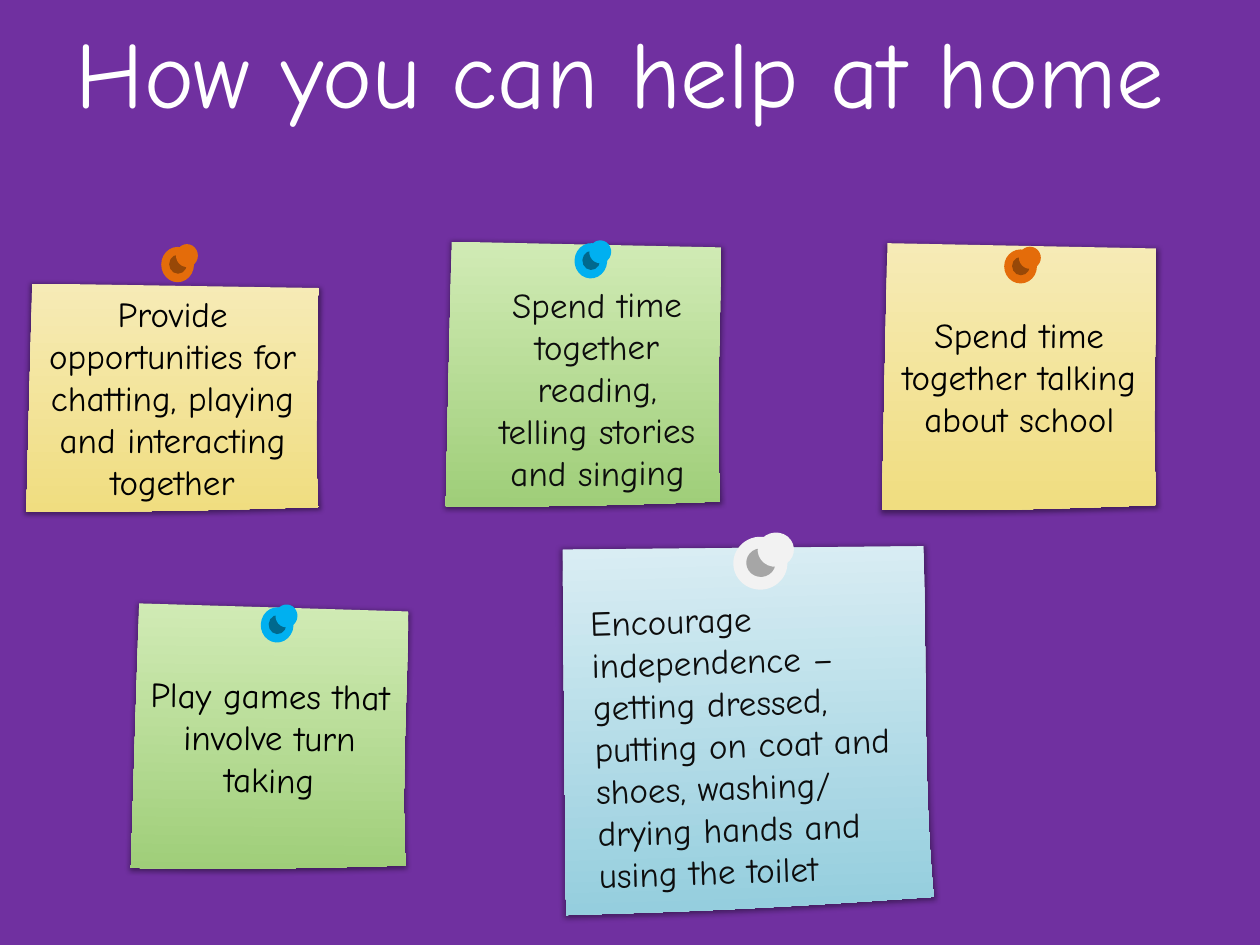
"""Build a slide of pinned sticky notes on a 100 by 75 grid."""
from dataclasses import dataclass
from typing import Optional

from lxml import etree
from pptx import Presentation
from pptx import util as u
from pptx.dml.color import RGBColor
from pptx.enum import shapes, text
from pptx.oxml import ns

CELL = u.Inches(0.1)
FONT = "Comic Neue"
PURPLE = RGBColor(0x70, 0x30, 0xA0)
WHITE = RGBColor(0xFF, 0xFF, 0xFF)
BLACK = RGBColor(0, 0, 0)
INK = RGBColor(0x0D, 0x0D, 0x0D)
YELLOW = (RGBColor(0xF6, 0xEB, 0xB6), RGBColor(0xF0, 0xDD, 0x80))
GREEN = (RGBColor(0xD1, 0xEB, 0xB5), RGBColor(0x9F, 0xCE, 0x79))
BLUE = (RGBColor(0xDB, 0xEE, 0xF4), RGBColor(0x93, 0xCD, 0xDD))
ORANGE = (RGBColor(0xE4, 0x6C, 0x0A), RGBColor(0x98, 0x48, 0x07))
SKY = (RGBColor(0, 0xB0, 0xF0), RGBColor(0, 0x69, 0x8E))
PALE = (RGBColor(0xF2, 0xF2, 0xF2), RGBColor(0xA6, 0xA6, 0xA6))

TOP = ((0.02, 0), (1, 0.02))
SIDE = ((1, 0.34), (0.98, 0.68), (1, 0.98))
FOOT = ((0.5, 1), (0.33, 1), (0, 1))
DISCS = ((0, 0, 1, 1, 0), (0.24, 0.22, 0.54, 0.54, 1), (0.45, -0.08, 0.67, 0.65, 0))


@dataclass
class Box:
    """Place on the grid, with a turn in degrees."""
    x: float
    y: float
    w: float
    h: float
    turn: float = 0

    def emu(self) -> list[int]:
        return [round(v * CELL) for v in (self.x, self.y, self.w, self.h)]


@dataclass
class Note:
    """Sticky note with its pin and, if needed, its own label box."""
    words: str
    box: Box
    tint: tuple
    pin: Box
    hue: tuple
    label: Optional[Box] = None
    align: text.PP_ALIGN = text.PP_ALIGN.CENTER


NOTES = [
    Note("Spend time together talking about school",
         Box(70, 19.3, 21.8, 21.2), YELLOW, Box(79.7, 19.8, 2.6, 2.7), ORANGE),
    Note("Spend time together reading, telling stories and singing",
         Box(35.4, 19.2, 21.8, 21, 0.1), GREEN, Box(45.6, 19.3, 2.6, 2.8, 3.6), SKY,
         Box(38.2, 21.9, 18.4, 17.8, -0.2)),
    Note("Provide opportunities for chatting, playing and interacting together",
         Box(2.1, 22.5, 23.2, 18.1), YELLOW, Box(12.8, 19.6, 2.6, 2.8), ORANGE),
    Note("Encourage independence – getting dressed, putting on coat and shoes, "
         "washing/ drying hands and using the toilet",
         Box(44.5, 43.2, 29.2, 29, -1.7), BLUE, Box(58.2, 42.6, 4.3, 4.2, -4.5), PALE,
         Box(46.2, 46.7, 27.2, 24.6, -2), text.PP_ALIGN.LEFT),
    Note("Play games that involve turn taking",
         Box(10.5, 48, 21.8, 21, 0.6), GREEN, Box(20.7, 48.2, 2.6, 2.8, 4.1), SKY),
]


def write(shape, words: str, *, size: float = 20, color: RGBColor = BLACK,
          align: text.PP_ALIGN = text.PP_ALIGN.CENTER, inset: float = 0.1,
          right: Optional[float] = None) -> None:
    """Fill a shape with one formatted paragraph."""
    frame = shape.text_frame
    frame.word_wrap = True
    frame.vertical_anchor = text.MSO_ANCHOR.MIDDLE
    frame.margin_left = u.Inches(inset)
    frame.margin_right = u.Inches(inset if right is None else right)
    frame.margin_top = frame.margin_bottom = u.Inches(0.05)
    para = frame.paragraphs[0]
    para.alignment = align
    run = para.add_run()
    run.text = words
    run.font.name, run.font.size = FONT, u.Pt(size)
    run.font.color.rgb = color


def bend(shape) -> None:
    """Turn the last six straight steps of an outline into two curves."""
    route = next(shape._element.iter(ns.qn("a:path")))
    steps = route.findall(ns.qn("a:lnTo"))[-6:]
    for trio in (steps[:3], steps[3:]):
        arc = etree.Element(ns.qn("a:cubicBezTo"))
        trio[0].addprevious(arc)
        for step in trio:
            arc.append(step[0])
            route.remove(step)


def shade(shape) -> None:
    """Give a shape a soft dark shadow."""
    shape.shadow.inherit = False
    effects = shape._element.spPr.find(ns.qn("a:effectLst"))
    outer = etree.SubElement(effects, ns.qn("a:outerShdw"), blurRad=str(u.Pt(3)),
                             dist=str(u.Pt(1)), dir="5400000", sx="101000", sy="101000",
                             algn="ctr", rotWithShape="0")
    color = etree.SubElement(outer, ns.qn("a:srgbClr"), val="000000")
    etree.SubElement(color, ns.qn("a:alpha"), val="40000")


def sheet(group, box: Box, tint: tuple):
    """Draw the curled paper of a note."""
    x, y, w, h = box.emu()
    spots = [(round(x + px * w), round(y + py * h)) for px, py in (*TOP, *SIDE, *FOOT)]
    pen = group.shapes.build_freeform(*spots[0])
    pen.add_line_segments(spots[1:], close=True)
    paper = pen.convert_to_shape()
    bend(paper)
    paper.rotation = box.turn
    paper.fill.gradient()
    paper.fill.gradient_angle = 270
    for stop, color in zip(paper.fill.gradient_stops, tint):
        stop.color.rgb = color
    paper.line.fill.background()
    shade(paper)
    return paper


def tack(group, box: Box, hue: tuple) -> None:
    """Draw a pin from three discs."""
    for dx, dy, dw, dh, tone in DISCS:
        spot = Box(box.x + dx * box.w, box.y + dy * box.h, dw * box.w, dh * box.h)
        disc = group.shapes.add_shape(shapes.MSO_SHAPE.OVAL, *spot.emu())
        disc.rotation = box.turn
        disc.shadow.inherit = False
        disc.fill.solid()
        disc.fill.fore_color.rgb = hue[tone]
        disc.line.fill.background()


def post(slide, note: Note) -> None:
    """Draw one note with its pin and words."""
    group = slide.shapes.add_group_shape()
    paper = sheet(group, note.box, note.tint)
    tack(group, note.pin, note.hue)
    if note.label:
        label = group.shapes.add_textbox(*note.label.emu())
        label.rotation = note.label.turn
        write(label, note.words, color=INK, align=note.align)
    else:
        write(paper, note.words, inset=0.05)


def main() -> None:
    """Build and save the slide."""
    deck = Presentation()
    deck.slide_width, deck.slide_height = 100 * CELL, 75 * CELL
    slide = deck.slides.add_slide(deck.slide_layouts[6])
    slide.background.fill.solid()
    slide.background.fill.fore_color.rgb = PURPLE
    title = slide.shapes.add_textbox(*Box(5, 1.7, 90, 7.8).emu())
    write(title, "How you can help at home", size=54, color=WHITE, inset=0.05, right=0.21)
    for note in NOTES:
        post(slide, note)
    deck.save("out.pptx")


if __name__ == "__main__":
    main()
